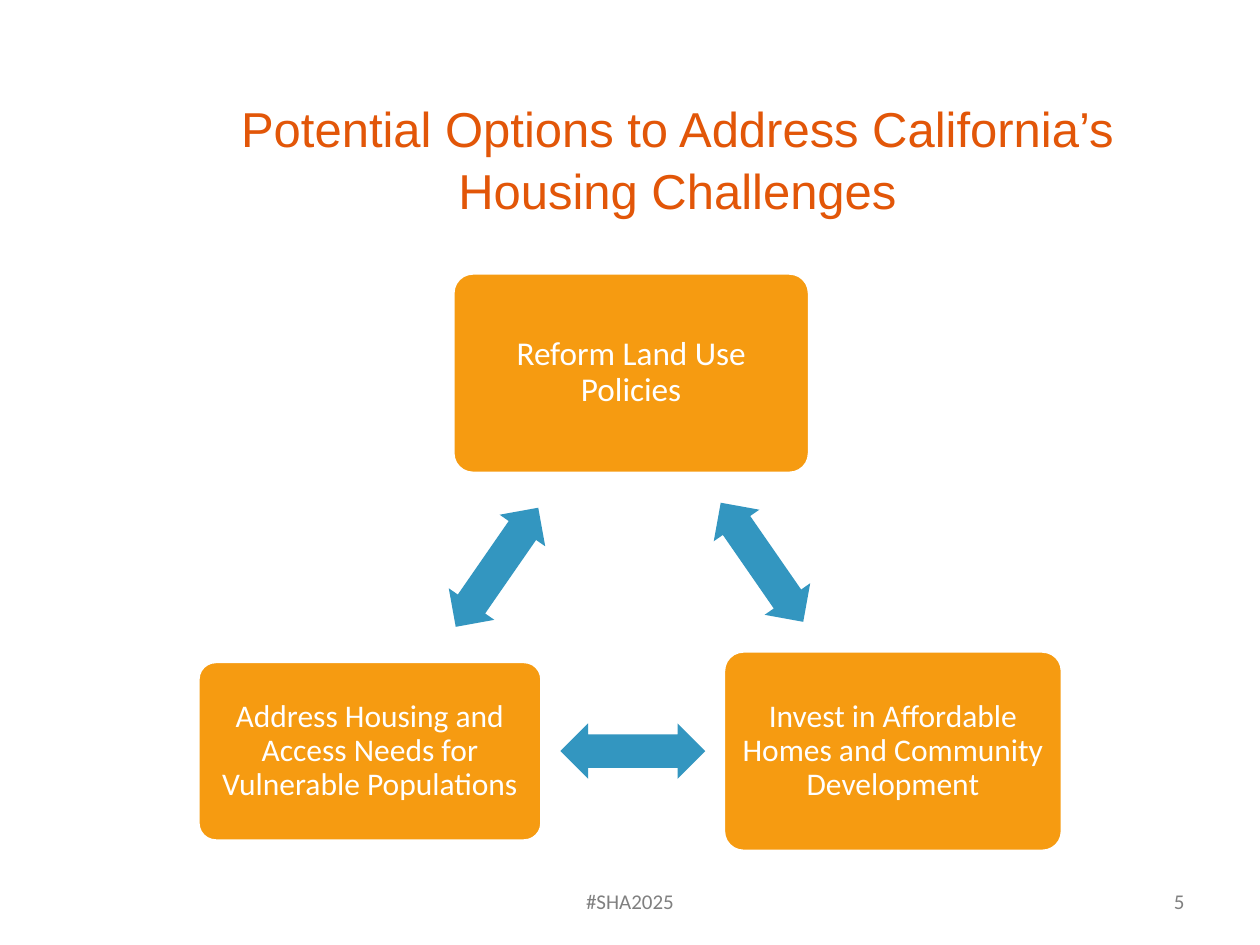
from pptx import Presentation, util as u
from pptx.dml.color import RGBColor
from pptx.enum import shapes, text

ORANGE = RGBColor(0xF6, 0x9B, 0x11)
BLUE = RGBColor(0x33, 0x96, 0xC0)
RUST = RGBColor(0xE2, 0x56, 0x08)
GRAY = RGBColor(0x80, 0x80, 0x80)
WHITE = RGBColor(0xFF, 0xFF, 0xFF)
CENTER, RIGHT = text.PP_ALIGN.CENTER, text.PP_ALIGN.RIGHT


class Deck:
    BODY, HEADING = "Calibri", "Arial"
    ARROW_SIZE = (82.8, 31.7)

    def __init__(self, width, height):
        self.prs = Presentation()
        self.prs.slide_width, self.prs.slide_height = u.Pt(width), u.Pt(height)
        self.slide = self.prs.slides.add_slide(self.prs.slide_layouts[5])

    def set_text(self, holder, words, size, color, font=BODY, margins=(7.2, 3.6),
                 **paragraph_format):
        frame = holder.text_frame
        side, top = (u.Pt(margin) for margin in margins)
        frame_format = {
            "word_wrap": True,
            "auto_size": text.MSO_AUTO_SIZE.NONE,
            "vertical_anchor": text.MSO_ANCHOR.MIDDLE,
            "margin_left": side, "margin_right": side,
            "margin_top": top, "margin_bottom": top,
        }
        for name, value in frame_format.items():
            setattr(frame, name, value)
        paragraph = frame.paragraphs[0]
        for name, value in paragraph_format.items():
            setattr(paragraph, name, value)
        run = paragraph.add_run()
        run.text = words
        for name, value in {"name": font, "size": u.Pt(size)}.items():
            setattr(run.font, name, value)
        run.font.color.rgb = color

    def title(self, words, left, top, width, height):
        heading = self.slide.shapes.title
        place = {"left": left, "top": top, "width": width, "height": height}
        for name, value in place.items():
            setattr(heading, name, u.Pt(value))
        self.set_text(heading, words, 28, RUST, self.HEADING, (0, 0),
                      alignment=CENTER, line_spacing=1.05)

    def footer(self, words, left, width, alignment):
        box = self.slide.shapes.add_textbox(
            u.Pt(left), u.Pt(500.4), u.Pt(width), u.Pt(28.8))
        self.set_text(box, words, 12, GRAY, alignment=alignment)

    def shape(self, kind, place, fill, adjustments):
        figure = self.slide.shapes.add_shape(kind, *(u.Pt(v) for v in place))
        figure.shadow.inherit = False
        figure.fill.solid()
        figure.fill.fore_color.rgb = fill
        for index, value in enumerate(adjustments):
            figure.adjustments[index] = value
        return figure

    def option(self, words, place, size):
        card = self.shape(shapes.MSO_SHAPE.ROUNDED_RECTANGLE, place, ORANGE, [0.1])
        card.line.color.rgb = WHITE
        card.line.width = u.Pt(2)
        self.set_text(card, words, size, WHITE, margins=(5.4, 5.4),
                      alignment=CENTER, line_spacing=0.9)

    def link(self, center_x, center_y, angle):
        width, height = self.ARROW_SIZE
        place = (center_x - width / 2, center_y - height / 2, width, height)
        arrow = self.shape(shapes.MSO_SHAPE.LEFT_RIGHT_ARROW, place, BLUE, [0.6, 0.5])
        arrow.line.fill.background()
        arrow.rotation = angle


def main():
    deck = Deck(720, 540)
    deck.title("Potential Options to Address California’s Housing Challenges",
               120, 48, 534, 84)
    options = [
        ("Reform Land Use Policies", (258.8, 156, 203.8, 114.5), 19),
        ("Invest in Affordable Homes and Community Development",
         (413.4, 372, 193.7, 114.5), 18),
        ("Address Housing and Access Needs for Vulnerable Populations",
         (113.1, 378, 196.6, 102.6), 18),
    ]
    for option in options:
        deck.option(*option)
    for arrow in [(435.4, 321.3, 55.3), (361.6, 429.2, 180), (284, 324.2, 304.7)]:
        deck.link(*arrow)
    deck.footer("#SHA2025", 246, 228, CENTER)
    deck.footer("5", 516, 168, RIGHT)
    deck.prs.save("out.pptx")


if __name__ == "__main__":
    main()
